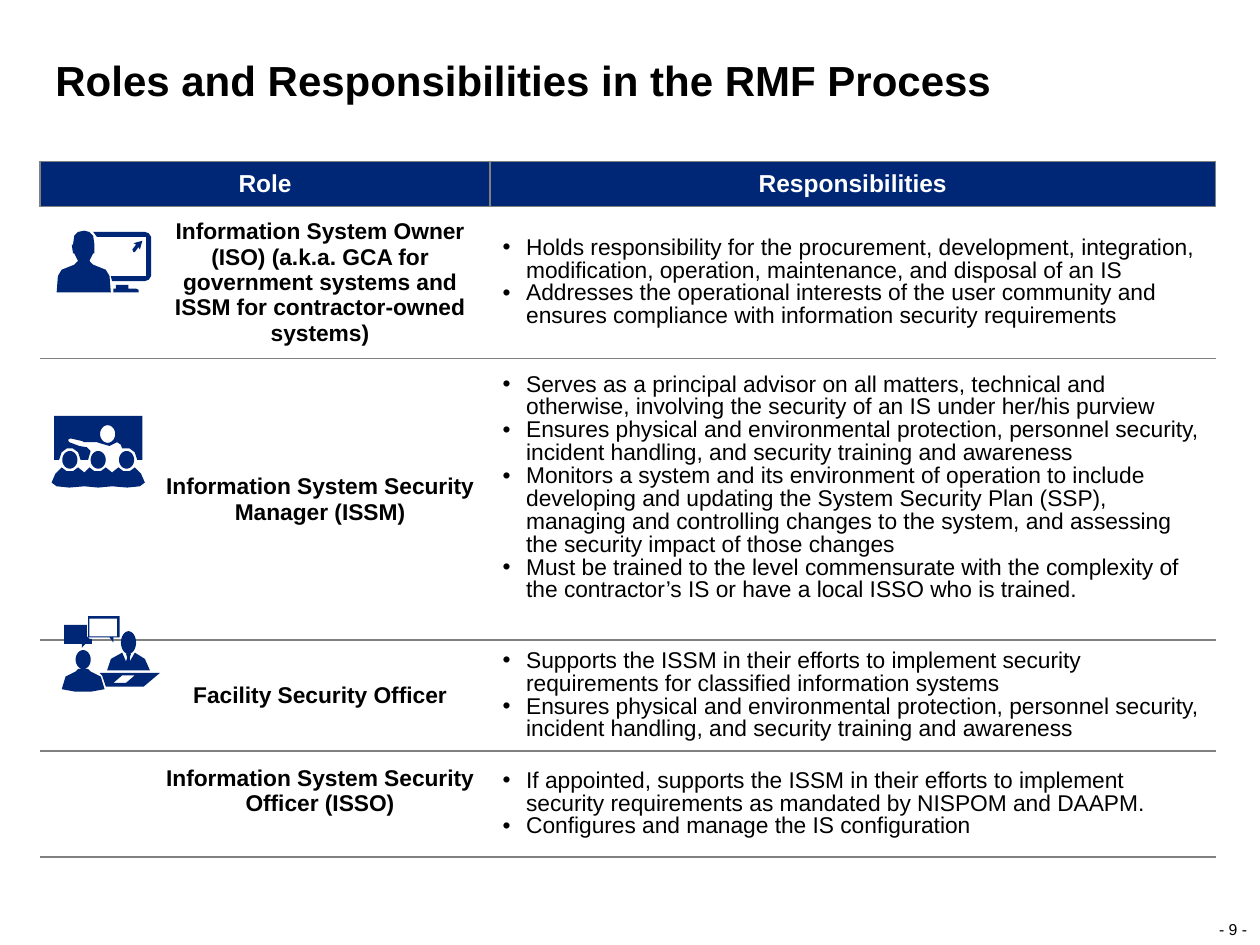
from math import cos, pi, sin

from lxml import etree
from pptx import Presentation
from pptx.dml.color import RGBColor
from pptx.enum import text as t
from pptx.oxml import ns
from pptx.util import Pt

HUES = {"navy": "002776", "grey": "808080", "white": "FFFFFF", "black": "000000"}
PLAIN = "{2D5ABB26-0587-4C30-8999-92F81FD0307C}"  # table style without lines
GRID = 0.72  # icon grid step in points
MID = t.MSO_ANCHOR.MIDDLE
CENTER = t.PP_ALIGN.CENTER

ROWS = [  # role, duties, row height, extra space below role and duties
    ("Information System Owner (ISO) (a.k.a. GCA for government systems and "
     "ISSM for contractor-owned systems)",
     ["Holds responsibility for the procurement, development, integration, "
      "modification, operation, maintenance, and disposal of an IS",
      "Addresses the operational interests of the user community and ensures "
      "compliance with information security requirements"], 87, 0, 0),
    ("Information System Security Manager (ISSM)",
     ["Serves as a principal advisor on all matters, technical and otherwise, "
      "involving the security of an IS under her/his purview",
      "Ensures physical and environmental protection, personnel security, "
      "incident handling, and security training and awareness",
      "Monitors a system and its environment of operation to include developing "
      "and updating the System Security Plan (SSP), managing and controlling "
      "changes to the system, and assessing the security impact of those changes",
      "Must be trained to the level commensurate with the complexity of the "
      "contractor’s IS or have a local ISSO who is trained."], 151.2, 0, 13),
    ("Facility Security Officer",
     ["Supports the ISSM in their efforts to implement security requirements "
      "for classified information systems",
      "Ensures physical and environmental protection, personnel security, "
      "incident handling, and security training and awareness"], 60.5, 0, 0),
    ("Information System Security Officer (ISSO)",
     ["If appointed, supports the ISSM in their efforts to implement security "
      "requirements as mandated by NISPOM and DAAPM.",
      "Configures and manage the IS configuration"], 60.5, 15, 0),
]


def tint(name):
    return RGBColor.from_string(HUES[name])


def write(frame, lines, size=13, bold=False, hue="black", align=None,
          space=None, bullet=False):
    for i, line in enumerate(lines):
        para = frame.paragraphs[0] if i == 0 else frame.add_paragraph()
        if bullet:
            props = para._p.get_or_add_pPr()
            props.set("marL", str(Pt(13.5)))
            props.set("indent", str(-Pt(13.5)))
            etree.SubElement(props, ns.qn("a:buFont"), typeface="Arial")
            etree.SubElement(props, ns.qn("a:buChar"), char="•")
        para.alignment = align
        para.line_spacing = space
        run = para.add_run()
        run.text = line
        font = run.font
        font.name, font.size, font.bold = "Arial", Pt(size), bold
        font.color.rgb = tint(hue)


def label(slide, box, line, wrap=True, **form):
    frame = slide.shapes.add_textbox(*map(Pt, box)).text_frame
    frame.margin_left = frame.margin_right = 0
    frame.margin_top = frame.margin_bottom = 0
    frame.word_wrap = wrap
    frame.vertical_anchor = t.MSO_ANCHOR.BOTTOM
    write(frame, [line], **form)


def edge(cell, sides):
    props = cell._tc.get_or_add_tcPr()
    for side in sides:
        line = etree.SubElement(props, ns.qn("a:ln" + side), w=str(Pt(1)))
        fill = etree.SubElement(line, ns.qn("a:solidFill"))
        etree.SubElement(fill, ns.qn("a:srgbClr"), val=HUES["grey"])


def paint(cell, sides, hue):
    edge(cell, sides)
    cell.fill.solid()
    cell.fill.fore_color.rgb = tint(hue)
    cell.vertical_anchor = MID


def roster(slide, box):
    frame = slide.shapes.add_table(len(ROWS) + 1, 3, *map(Pt, box))
    table = frame.table
    table._tbl.tblPr.find(ns.qn("a:tableStyleId")).text = PLAIN
    table.horz_banding = False
    for col, wide in zip(table.columns, (62.6, 194.4, 414.7)):
        col.width = Pt(wide)

    # Header
    table.rows[0].height = Pt(25.8)
    table.cell(0, 0).merge(table.cell(0, 1))
    for c in range(3):
        paint(table.cell(0, c), "LRTB", "navy")
    for c, head in ((0, "Role"), (2, "Responsibilities")):
        write(table.cell(0, c).text_frame, [head], size=14, bold=True,
              hue="white", align=CENTER)

    # One row for each role
    for r, (role, duties, tall, *gaps) in enumerate(ROWS, 1):
        table.rows[r].height = Pt(tall)
        for c in range(3):
            paint(table.cell(r, c), "TB", "white")
        for c, gap in enumerate(gaps, 1):
            table.cell(r, c).margin_bottom = Pt(3.6 + gap)
        write(table.cell(r, 1).text_frame, [role], bold=True, align=CENTER)
        write(table.cell(r, 2).text_frame, duties, space=0.9, bullet=True)


def oval(x, y, rx, ry, count=32):
    turns = [2 * pi * i / count for i in range(count)]
    return [(x + rx * cos(a), y + ry * sin(a)) for a in turns]


def form(slide, box, *loops):
    """Fill closed loops, given in grid steps from the corner of the box."""
    loops = [[(x * GRID * 100, y * GRID * 100) for x, y in loop] for loop in loops]
    pen = slide.shapes.build_freeform(*loops[0][0], scale=Pt(1) / 100)
    for i, loop in enumerate(loops):
        if i:
            pen.move_to(*loop[0])
        pen.add_line_segments(loop[1:], close=True)
    shape = pen.convert_to_shape(*map(Pt, box[:2]))
    shape.shadow.inherit = False
    shape.fill.solid()
    shape.fill.fore_color.rgb = tint("navy")
    shape.line.fill.background()


def owner(slide, box):
    # Screen, stand, arrow, person
    for loop in (
        [(70, 1), (29, 1), (32, 5), (71, 5), (71, 36), (43, 36), (44, 40),
         (70, 40), (73, 39), (75, 36), (75, 5), (73, 2)],
        [(63, 46), (57, 46), (57, 43), (47, 43), (47, 46), (45, 46), (45, 49),
         (65, 49), (65, 47)],
        [(66, 15), (68, 8), (61, 10), (63, 11), (60, 15), (61, 17), (62, 17), (65, 13)],
        [(14, 27), (4, 31), (1, 36), (0, 49), (43, 49), (42, 36), (39, 31), (29, 27),
         (26, 24), (29, 18), (30, 18), (30, 11), (29, 4), (26, 1), (22, 0), (17, 1),
         (14, 4), (13, 11), (12, 11), (13, 18), (14, 18), (17, 24)],
    ):
        form(slide, box, loop)


def coach(slide, box):
    board = [(2, 0), (72, 0), (72, 35), (68, 35), (66, 29), (62, 26), (56, 26),
             (55, 23), (52, 21), (46, 24), (39, 22), (36, 21), (26, 21), (24, 20),
             (15, 18), (13, 19), (14, 21), (22, 24), (28, 25), (31, 28), (29, 35),
             (23, 35), (21, 29), (17, 26), (12, 26), (8, 29), (6, 35), (2, 35)]
    crowd = [(8, 41), (12, 44), (17, 44), (21, 41), (26, 45), (30, 41), (34, 44),
             (39, 44), (43, 41), (48, 45), (53, 41), (57, 44), (62, 44), (66, 41),
             (71, 46), (74, 53), (70, 56), (60, 57), (48, 56), (37, 57), (26, 56),
             (14, 57), (4, 56), (0, 53), (3, 46)]
    heads = [oval(x, 35, 6, 7) for x in (14.5, 37, 59.5)]
    form(slide, box, board, crowd, *heads, oval(44.5, 14.5, 6, 7))


def desk(slide, box):
    guard = [(36, 43), (39, 34), (48, 29), (51, 36), (52, 33), (51, 30), (55, 30),
             (54, 33), (54, 36), (58, 29), (66, 34), (70, 43)]
    top = [(30, 45), (78, 45), (65, 56), (35, 56), (32, 47)]
    sheet = [(48, 47), (58, 47), (51, 53), (41, 53)]
    guest = [(0, 58), (3, 48), (11, 44), (13, 42), (21, 42), (23, 44), (31, 48),
             (34, 58), (23, 60), (11, 60)]
    rim = [(46, 17), (46, 0), (21, 0), (21, 17), (38, 17), (41, 21), (41, 17)]
    pane = [(44, 2), (22, 2), (22, 16), (44, 16)]
    talk = [(16, 25), (19, 22), (24, 22), (24, 18), (22, 18), (20, 16), (20, 7),
            (2, 7), (2, 22), (16, 22)]
    form(slide, box, oval(53, 21, 6, 9), guard, top, sheet,
         oval(17, 34.5, 6, 7.5), guest, rim, pane, talk)


def main():
    deck = Presentation()
    deck.slide_width, deck.slide_height = Pt(720), Pt(540)
    slide = deck.slides.add_slide(deck.slide_layouts[6])
    label(slide, (693.4, 524.9, 22.3, 11.5), "- 9 -", wrap=False, size=9,
          align=CENTER, space=1.06)
    label(slide, (31.7, 34.6, 657.4, 25.9),
          "Roles and Responsibilities in the RMF Process",
          size=24, bold=True, space=0.9)
    roster(slide, (23, 92.2, 671.7, 385))
    owner(slide, (32.4, 131.8, 54, 35.3))
    coach(slide, (29.5, 237.6, 53.3, 41.8))
    desk(slide, (35.3, 352.1, 56.2, 43.9))
    deck.save("out.pptx")


if __name__ == "__main__":
    main()
